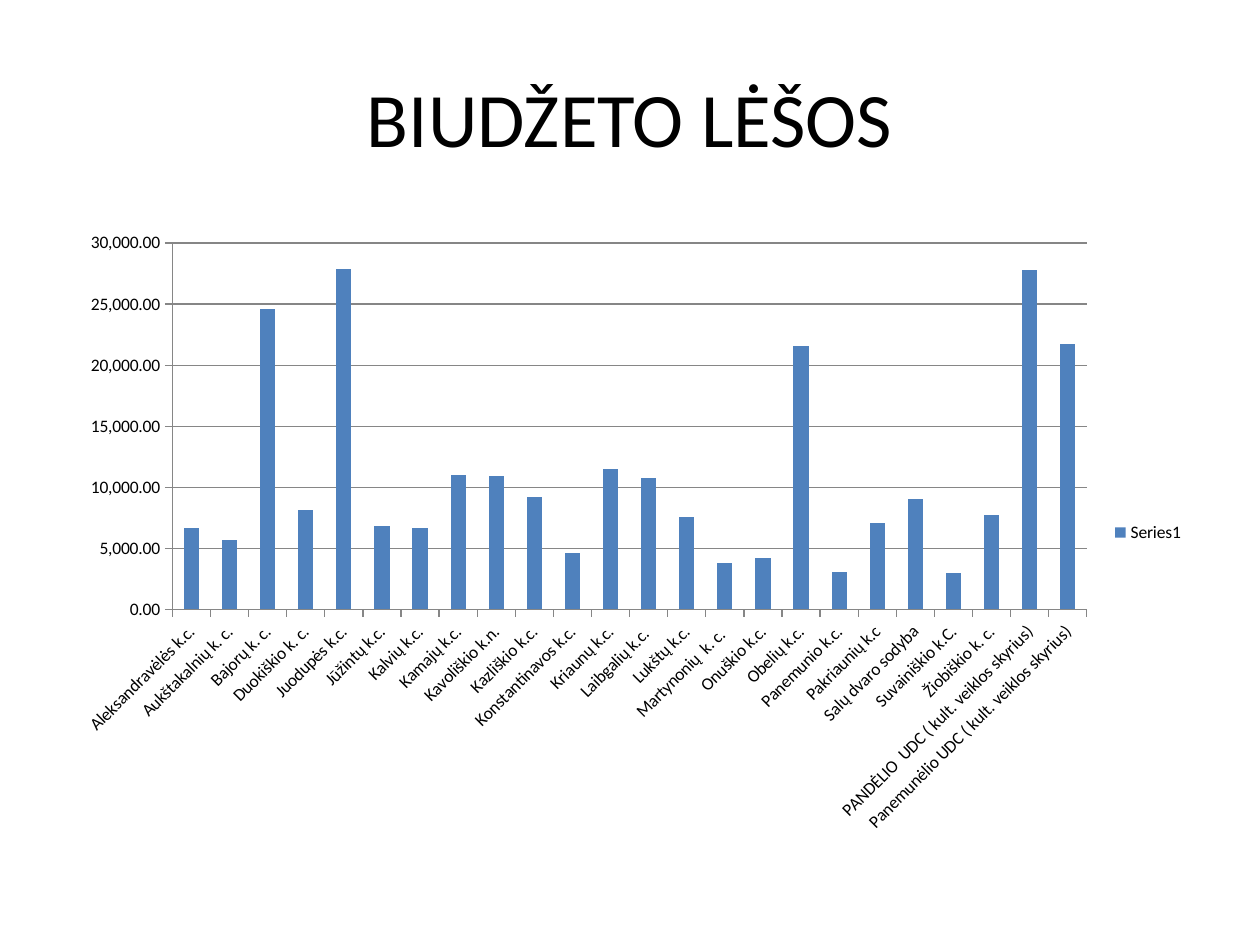
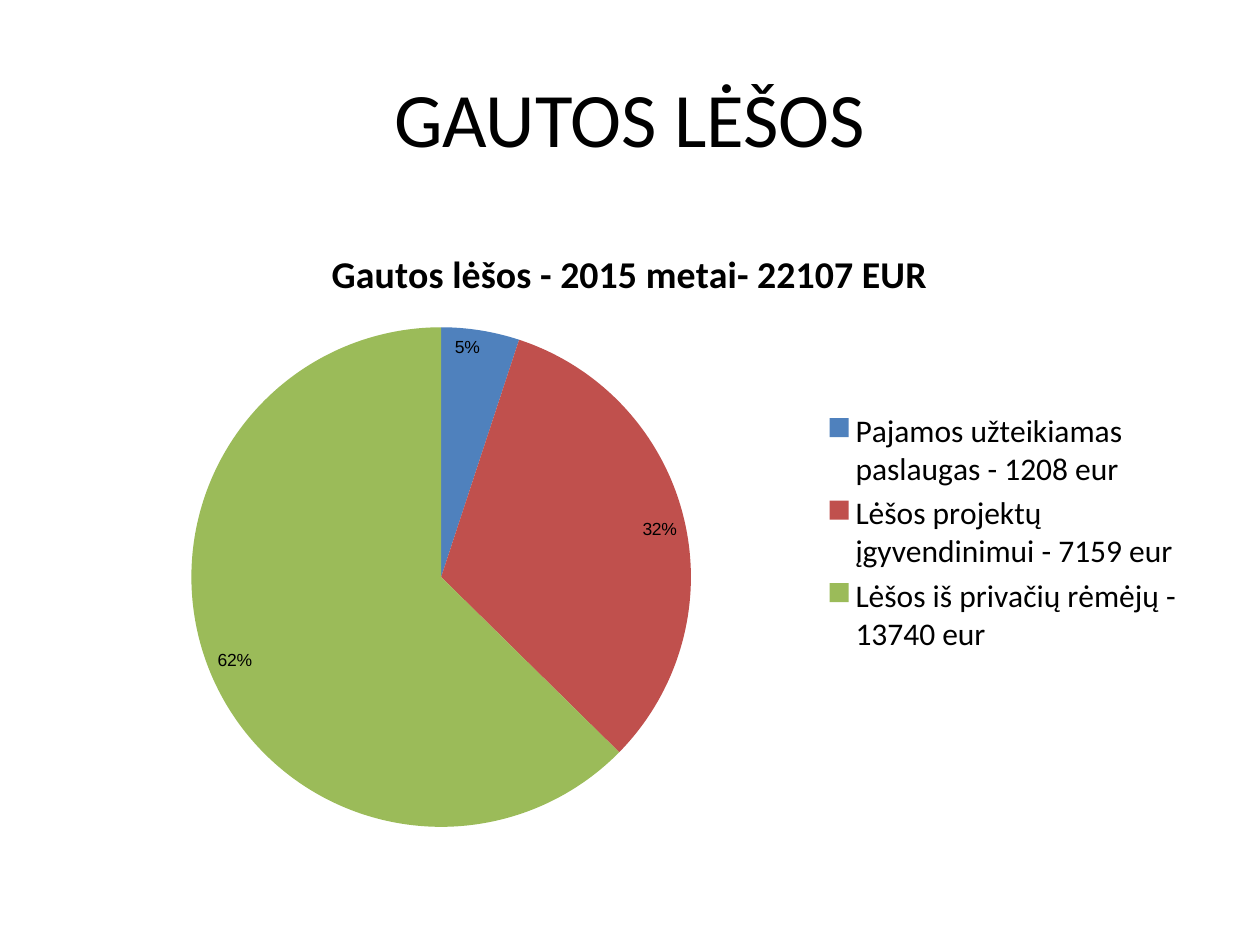
from pptx import Presentation
from pptx.chart.data import CategoryChartData
from pptx.dml.color import RGBColor as RGB
from pptx.enum.chart import XL_CHART_TYPE as CT, XL_LABEL_POSITION as LABEL
from pptx.enum.chart import XL_LEGEND_POSITION as LEGEND, XL_TICK_MARK as TICK
from pptx.enum.text import MSO_ANCHOR, PP_ALIGN
from pptx.oxml.ns import qn
from pptx.util import Cm, Pt

COLORS = {"text": "000000", "grid": "868686",
          "blue": "4F81BD", "red": "C0504D", "green": "9BBB59"}
FONT = "Calibri"
LEFT, WIDTH = Cm(1.27), Cm(22.86)

BUDGET = {
    "Aleksandravėlės k.c.": 6700, "Aukštakalnių k. c.": 5700,
    "Bajorų k. c.": 24600, "Duokiškio k. c.": 8100,
    "Juodupės k.c.": 27900, "Jūžintų k.c.": 6800,
    "Kalvių k.c.": 6700, "Kamajų k.c.": 11000,
    "Kavoliškio k.n.": 10900, "Kazliškio k.c.": 9200,
    "Konstantinavos k.c.": 4600, "Kriaunų k.c.": 11500,
    "Laibgalių k.c. ": 10800, "Lukštų k.c.": 7600,
    "Martynonių  k. c. ": 3800, "Onuškio k.c.": 4200,
    "Obelių k.c.": 21600, "Panemunio k.c.": 3100,
    "Pakriaunių k.c": 7100, "Salų dvaro sodyba": 9000,
    "Suvainiškio k.C.": 3000, "Žiobiškio k. c.": 7700,
    "PANDĖLIO  UDC ( kult. veiklos skyrius)": 27800,
    "Panemunėlio UDC ( kult. veiklos skyrius)": 21700,
}
RECEIVED = {
    "Pajamos užteikiamas paslaugas - 1208 eur": 0.05,
    "Lėšos projektų įgyvendinimui - 7159 eur": 0.32,
    "Lėšos iš privačių rėmėjų - 13740 eur": 0.62,
}
RECEIVED_TITLE = "Gautos lėšos - 2015 metai- 22107 EUR"


def set_font(font, size, name=FONT, bold=False):
    for key, value in {"name": name, "size": Pt(size), "bold": bold}.items():
        setattr(font, key, value)
    font.color.rgb = RGB.from_string(COLORS["text"])


def set_fill(fill, color):
    fill.solid()
    fill.fore_color.rgb = RGB.from_string(COLORS[color])


prs = Presentation()
prs.slide_width, prs.slide_height = Cm(25.4), Cm(19.05)

charts = []
for heading, kind, series_name, values, size in (
        ("BIUDŽETO LĖŠOS", CT.COLUMN_CLUSTERED, "", BUDGET, 10),
        ("GAUTOS LĖŠOS", CT.PIE, RECEIVED_TITLE, RECEIVED, 18)):
    s = prs.slides.add_slide(prs.slide_layouts[5])
    title = s.shapes.title
    title.left, title.top, title.width, title.height = LEFT, Cm(0.76), WIDTH, Cm(3.18)
    tf = title.text_frame
    tf.vertical_anchor = MSO_ANCHOR.MIDDLE
    p = tf.paragraphs[0]
    p.alignment = PP_ALIGN.CENTER
    r = p.add_run()
    r.text = heading
    set_font(r.font, 44)

    data = CategoryChartData()
    data.categories = list(values)
    data.add_series(series_name, list(values.values()))
    chart = s.shapes.add_chart(kind, LEFT, Cm(4.45), WIDTH, Cm(12.57), data).chart
    set_font(chart.font, size)
    chart.has_title = False
    chart.has_legend = True
    chart.legend.position = LEGEND.RIGHT
    chart.legend.include_in_layout = False
    charts.append(chart)

columns, pie = charts

# Budget columns: an unnamed series gets the default legend entry
plot = columns.plots[0]
plot.gap_width = 150
plot.vary_by_categories = False
ser = plot.series[0]._element
ser.remove(ser.find(qn("c:tx")))
set_fill(plot.series[0].format.fill, "blue")
value_axis = columns.value_axis
value_axis.has_major_gridlines = True
value_axis.tick_labels.number_format = "#,##0.00"
value_axis.tick_labels.number_format_is_linked = False
for axis in (columns.category_axis, value_axis):
    axis.major_tick_mark = TICK.OUTSIDE
for part in (columns.category_axis, value_axis, value_axis.major_gridlines):
    part.format.line.color.rgb = RGB.from_string(COLORS["grid"])
    part.format.line.width = Pt(0.75)

# Received funds pie
pie.has_title = True
r = pie.chart_title.text_frame.paragraphs[0].add_run()
r.text = RECEIVED_TITLE
set_font(r.font, 21.6, bold=True)
plot = pie.plots[0]
plot.vary_by_categories = True
for i, color in enumerate(("blue", "red", "green")):
    set_fill(plot.series[0].points[i].format.fill, color)
plot.has_data_labels = True
labels = plot.data_labels
for key, value in {"show_value": True, "show_percentage": False,
                   "number_format": "0%", "number_format_is_linked": False,
                   "position": LABEL.INSIDE_END}.items():
    setattr(labels, key, value)
set_font(labels.font, 10, "Arial")

prs.save("out.pptx")
